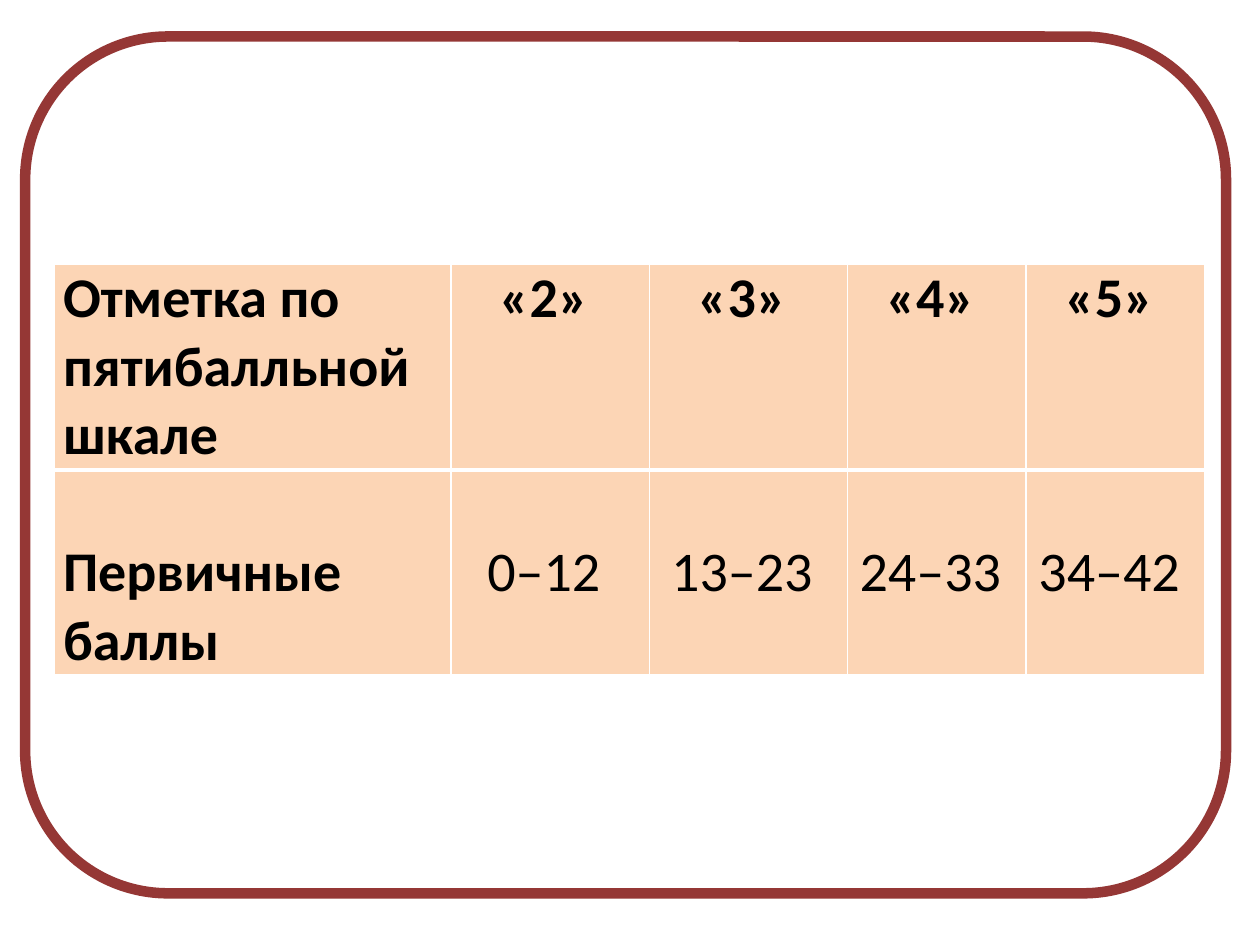
from dataclasses import dataclass

from lxml import etree
from pptx import Presentation
from pptx.dml.color import RGBColor
from pptx.enum.shapes import MSO_SHAPE as Shape
from pptx.enum.text import PP_ALIGN as Align
from pptx.oxml.ns import qn
from pptx.util import Pt

WHITE = RGBColor(0xFF, 0xFF, 0xFF)
BLACK = RGBColor(0x00, 0x00, 0x00)
MAROON = RGBColor(0x95, 0x37, 0x35)
PEACH = RGBColor(0xFC, 0xD5, 0xB5)

FONT = "Calibri"
FONT_SIZE = 32
LINE_HEIGHT = 39
ROW_HEIGHT = 3 * LINE_HEIGHT
COL_WIDTHS = (226.8, 113.2, 113.2, 102.2, 102.2)


@dataclass
class Panel:
    kind: Shape
    left: float
    top: float
    width: float
    height: float
    line: RGBColor
    weight: float


@dataclass
class Row:
    label: tuple[str, ...]
    values: tuple[str, ...]
    bold_values: bool
    top_inset: float
    top_border: float
    bottom_border: float


PANELS = (
    Panel(Shape.ROUNDED_RECTANGLE, 14.4, 20.9, 686.2, 489.6, MAROON, 6),
    Panel(Shape.RECTANGLE, 20.2, 145.4, 668.9, 244.1, WHITE, 2),
)
ROWS = (
    Row(("Отметка по", "пятибалльной шкале"),
        ("«2» ", "«3» ", "«4» ", "«5» "), True, 0, 1, 3),
    Row(("Первичные баллы",),
        ("0–12 ", "13–23 ", "24–33 ", "34–42 "), False, LINE_HEIGHT, 3, 1),
)


def add_panel(s, panel: Panel) -> None:
    sp = s.shapes.add_shape(panel.kind, Pt(panel.left), Pt(panel.top),
                            Pt(panel.width), Pt(panel.height))
    sp.shadow.inherit = False
    sp.fill.solid()
    sp.fill.fore_color.rgb = WHITE
    sp.line.color.rgb = panel.line
    sp.line.width = Pt(panel.weight)


def set_borders(cell, top: float, bottom: float) -> None:
    props = cell._tc.get_or_add_tcPr()
    sides = (("lnL", 1), ("lnR", 1), ("lnT", top), ("lnB", bottom))
    for i, (tag, weight) in enumerate(sides):
        ln = etree.Element(qn(f"a:{tag}"), w=str(Pt(weight)))
        fill = etree.SubElement(ln, qn("a:solidFill"))
        etree.SubElement(fill, qn("a:srgbClr"), val=str(WHITE))
        props.insert(i, ln)


def fill_cell(cell, lines: tuple[str, ...], row: Row,
              align: Align, bold: bool) -> None:
    cell.fill.solid()
    cell.fill.fore_color.rgb = PEACH
    cell.margin_left = cell.margin_right = Pt(5)
    cell.margin_top, cell.margin_bottom = Pt(row.top_inset), Pt(0)
    set_borders(cell, row.top_border, row.bottom_border)
    tf = cell.text_frame
    for i, line in enumerate(lines):
        p = tf.add_paragraph() if i else tf.paragraphs[0]
        p.text = line
        p.alignment = align
        p.font.name = FONT
        p.font.size = Pt(FONT_SIZE)
        p.font.bold = bold
        p.font.color.rgb = BLACK


def add_score_table(s) -> None:
    table = s.shapes.add_table(
        len(ROWS), len(COL_WIDTHS), Pt(31), Pt(151.2),
        Pt(sum(COL_WIDTHS)), Pt(len(ROWS) * ROW_HEIGHT)).table
    table.first_row = table.horz_banding = False
    for col, width in zip(table.columns, COL_WIDTHS):
        col.width = Pt(width)
    for r, row in enumerate(ROWS):
        table.rows[r].height = Pt(ROW_HEIGHT)
        fill_cell(table.cell(r, 0), row.label, row, Align.LEFT, True)
        for c, value in enumerate(row.values, 1):
            fill_cell(table.cell(r, c), (value,), row,
                      Align.CENTER, row.bold_values)


def main() -> None:
    prs = Presentation()
    prs.slide_width, prs.slide_height = Pt(720), Pt(540)
    s = prs.slides.add_slide(prs.slide_layouts[6])
    # Frame and table backing
    for panel in PANELS:
        add_panel(s, panel)
    # Marks and their score ranges
    add_score_table(s)
    prs.save("out.pptx")


if __name__ == "__main__":
    main()
